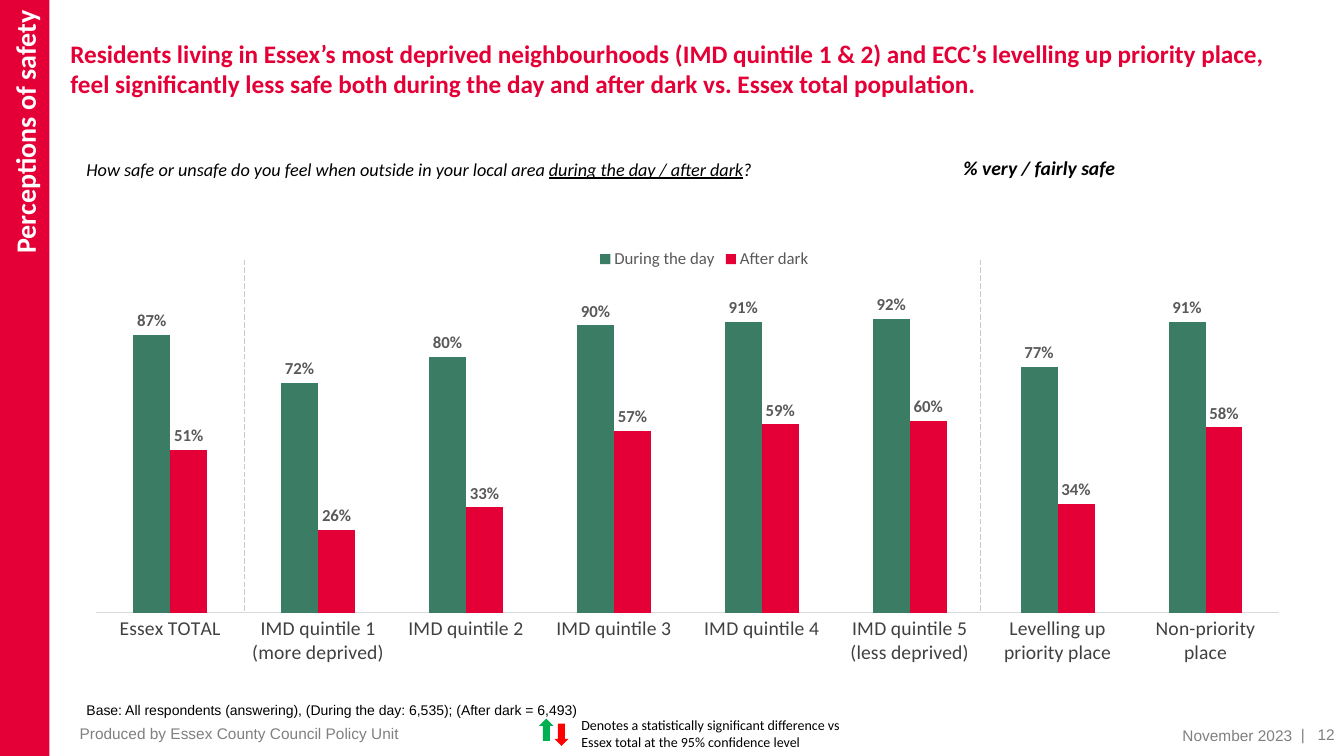
import pptx
import pptx.util
import pptx.chart.data
import pptx.dml.color
import pptx.enum.chart
import pptx.enum.dml
import pptx.enum.shapes
import pptx.enum.text
import pptx.oxml
import pptx.oxml.ns

Pt = pptx.util.Pt
ALIGN = pptx.enum.text.PP_ALIGN
ANCHOR = pptx.enum.text.MSO_ANCHOR
SHAPE = pptx.enum.shapes.MSO_SHAPE
CHART = pptx.enum.chart
COLORS = {
    "red": "E40037", "green": "3A7D64", "higher": "00B050", "lower": "FF0000",
    "black": "000000", "white": "FFFFFF", "footer": "808080", "axis_text": "404040",
    "label": "595959", "axis_line": "D9D9D9", "divider": "C9C9C9",
}
DRAWING = pptx.oxml.ns.nsdecls("a", "c")


def rgb(name):
    return pptx.dml.color.RGBColor.from_string(COLORS[name])


class SlideBuilder:
    def __init__(self, slide, font="Calibri"):
        self.slide = slide
        self.font = font

    def style(self, font, size, color="black", bold=False, italic=False, name=None):
        font.name = name or self.font
        font.size = Pt(size)
        font.bold = bold
        font.italic = italic
        font.color.rgb = rgb(color)

    def set_text(self, shape, spans, size, align=ALIGN.LEFT, anchor=ANCHOR.TOP,
                 insets=(7.2, 3.6, 7.2, 3.6), **look):
        frame = shape.text_frame
        frame.word_wrap = True
        frame.vertical_anchor = anchor
        frame.margin_left, frame.margin_top, frame.margin_right, frame.margin_bottom = map(Pt, insets)
        para = frame.paragraphs[0]
        para.alignment = align
        self.style(para.font, size, **look)
        for text in spans:
            para.add_run().text = text
        return para

    def text(self, place, spans, size, **options):
        box = self.slide.shapes.add_textbox(*map(Pt, place))
        return self.set_text(box, spans, size, **options)

    def footer(self, place, spans, **options):
        return self.text(place, spans, 11, color="footer", name="Arial", anchor=ANCHOR.MIDDLE, **options)

    def shape(self, kind, place, color, rotation=0):
        shape = self.slide.shapes.add_shape(kind, *map(Pt, place))
        shape.shadow.inherit = False
        shape.fill.solid()
        shape.fill.fore_color.rgb = rgb(color)
        shape.line.fill.background()
        shape.rotation = rotation
        return shape

    def divider(self, x, bottom, top):
        line = self.slide.shapes.add_connector(
            pptx.enum.shapes.MSO_CONNECTOR.STRAIGHT, Pt(x), Pt(bottom), Pt(x), Pt(top))
        line.line.color.rgb = rgb("divider")
        line.line.width = Pt(0.5)
        line.line.dash_style = pptx.enum.dml.MSO_LINE.LONG_DASH
        line._element.spPr.append(pptx.oxml.parse_xml(f"<a:effectLst {DRAWING}/>"))

    def label_box(self, point, color):
        self.style(point.data_label.font, 12, "label", bold=True)
        point.data_label.position = CHART.XL_LABEL_POSITION.OUTSIDE_END
        return pptx.oxml.parse_xml(
            f'<c:spPr {DRAWING}><a:noFill/><a:ln w="{Pt(1.5)}"><a:solidFill>'
            f'<a:srgbClr val="{COLORS[color]}"/></a:solidFill></a:ln></c:spPr>')

    def column_chart(self, place, categories, series_rows, layout):
        data = pptx.chart.data.CategoryChartData(number_format="0%")
        data.categories = categories
        for name, values, _, _ in series_rows:
            data.add_series(name, values)
        chart = self.slide.shapes.add_chart(
            CHART.XL_CHART_TYPE.COLUMN_CLUSTERED, *map(Pt, place), data).chart
        self.style(chart.font, 10)
        chart.has_title = False
        chart.has_legend = True
        chart.legend.position = CHART.XL_LEGEND_POSITION.TOP
        chart.legend.include_in_layout = False
        self.style(chart.legend.font, 12, "label")

        values_axis = chart.value_axis
        values_axis.minimum_scale, values_axis.maximum_scale = 0, 1
        values_axis.has_major_gridlines = False
        values_axis.visible = False
        category_axis = chart.category_axis
        category_axis.major_tick_mark = CHART.XL_TICK_MARK.NONE
        category_axis.format.line.color.rgb = rgb("axis_line")
        category_axis.format.line.width = Pt(0.75)
        self.style(category_axis.tick_labels.font, 14, "axis_text")

        plot = chart.plots[0]
        plot.gap_width, plot.overlap = 200, 0
        plot.vary_by_categories = False
        for series, (_, _, color, boxes) in zip(plot.series, series_rows):
            series.format.fill.solid()
            series.format.fill.fore_color.rgb = rgb(color)
            series.invert_if_negative = False
            labels = series.data_labels
            labels.show_value = True
            labels.number_format, labels.number_format_is_linked = "0%", False
            labels.position = CHART.XL_LABEL_POSITION.OUTSIDE_END
            self.style(labels.font, 12, "label", bold=True)
            outlines = [self.label_box(series.points[index], box)
                        for index, box in enumerate(boxes) if box]
            for label, outline in zip(series._element.xpath("c:dLbls/c:dLbl"), outlines):
                label.insert(1, outline)

        x, y, width, height = layout
        plot_area = chart._chartSpace.chart.plotArea
        for old in plot_area.xpath("c:layout"):
            plot_area.remove(old)
        plot_area.insert(0, pptx.oxml.parse_xml(
            f'<c:layout {DRAWING}><c:manualLayout><c:layoutTarget val="inner"/>'
            f'<c:xMode val="edge"/><c:yMode val="edge"/><c:x val="{x}"/><c:y val="{y}"/>'
            f'<c:w val="{width}"/><c:h val="{height}"/></c:manualLayout></c:layout>'))


def main():
    deck = pptx.Presentation()
    deck.slide_width, deck.slide_height = Pt(960), Pt(540)
    page = SlideBuilder(deck.slides.add_slide(deck.slide_layouts[6]))

    page.text((43.2, 23.76, 894.24, 83.52), [
        "Residents living in Essex’s most deprived neighbourhoods (IMD quintile 1 & 2) and ECC’s "
        "levelling up priority place, feel significantly less safe both during the day and after "
        "dark vs. Essex total population."],
        18, color="red", bold=True, insets=(7.2, 3.6, 7.2, 0))

    page_number = page.footer((899.28, 519.12, 61.2, 10.8), ["| ", "12"], align=ALIGN.RIGHT)
    page_number.runs[0]._r.get_or_add_rPr().set("spc", "300")
    page.footer((43.2, 518.4, 470.88, 10.8), ["Produced by Essex County Council Policy Unit"],
                insets=(13.68, 3.6, 7.2, 3.6))
    page.footer((757.44, 519.84, 172.8, 10.8), ["November 2023"], align=ALIGN.RIGHT)

    low, high = "lower", "higher"
    page.column_chart(
        (68.4, 169.92, 869.04, 344.16),
        ["Essex TOTAL", "IMD quintile 1\n(more deprived)", "IMD quintile 2", "IMD quintile 3",
         "IMD quintile 4", "IMD quintile 5\n(less deprived)", "Levelling up priority place",
         "Non-priority place"],
        [("During the day", (0.87, 0.72, 0.8, 0.9, 0.91, 0.92, 0.77, 0.91), "green",
          (low, low, low, high, high, high, low, high)),
         ("After dark", (0.51, 0.26, 0.33, 0.57, 0.59, 0.6, 0.34, 0.58), "red",
          (None, low, low, high, high, high, low, high))],
        (0, 0.115, 0.973, 0.663))

    question = page.text((54.72, 109.44, 621.36, 23.04), [
        "How safe or unsafe do you feel when outside in your local area ",
        "during the day / after dark", "?"], 13, italic=True)
    question.runs[1].font.underline = True

    sidebar = page.shape(SHAPE.RECTANGLE, (0, 0, 35.28, 540), "red")
    page.set_text(sidebar, ["Perceptions of safety"], 20, color="white", bold=True,
                  align=ALIGN.RIGHT, anchor=ANCHOR.MIDDLE, insets=(7.2, 7.2, 7.2, 3.6))
    sidebar.text_frame._txBody.bodyPr.set("vert", "vert270")

    measure = page.text((681.12, 108, 182.88, 24.48), ["% very / fairly safe"], 14,
                        bold=True, italic=True)
    measure.space_before = Pt(6)
    page.text((54.72, 497.52, 456.48, 19.44), [
        "Base: All respondents (answering), (During the day: 6,535); (After dark = 6,493)"],
        10, name="Arial")

    for x in (174.24, 700.56):
        page.divider(x, 436.32, 185.76)
    page.shape(SHAPE.UP_ARROW, (385.2, 513.36, 10.08, 15.84), "higher")
    page.shape(SHAPE.UP_ARROW, (396, 516.96, 10.08, 15.84), "lower", rotation=180)
    page.text((408.24, 508.32, 213.12, 31.68), [
        "Denotes a statistically significant difference vs Essex total at the 95% confidence level"], 10)

    deck.save("out.pptx")


if __name__ == "__main__":
    main()
